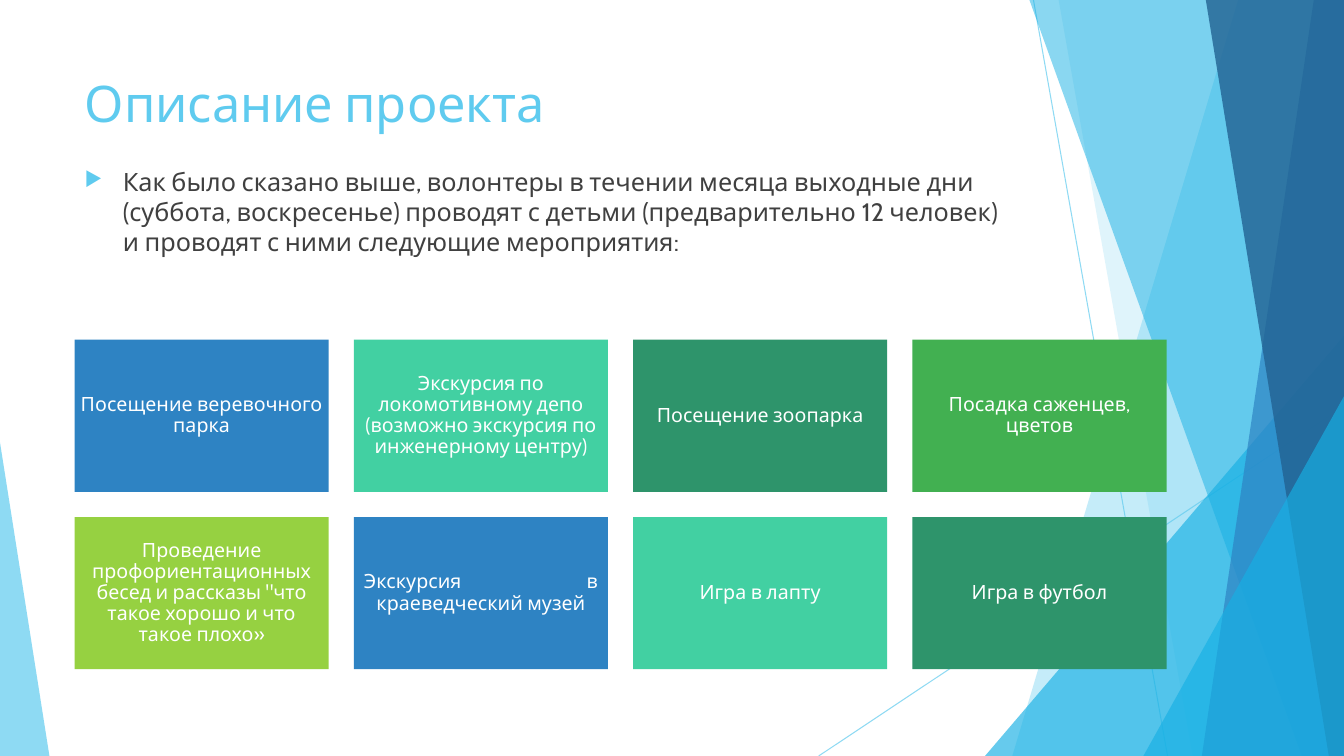
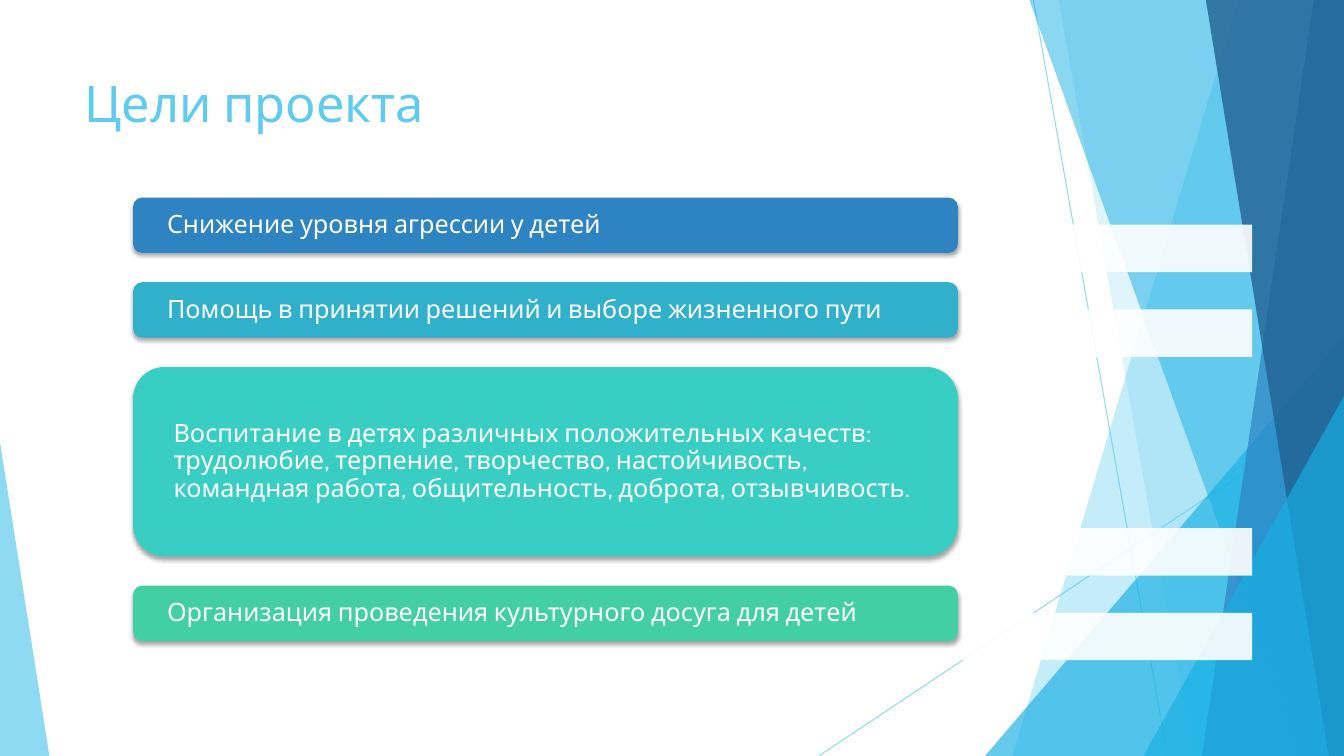
from dataclasses import dataclass

from lxml import etree
from pptx import Presentation
from pptx import util as u
from pptx.dml import color
from pptx.enum import shapes, text
from pptx.oxml import ns

WIDTH, HEIGHT = 13.33, 7.5
FONT = "Cabin"
LEFT = 0.74
TEXT_WIDTH = 9.4
SKY, AZURE, BLUE, NAVY = "5FCBEF", "17B0E4", "2E83C3", "226292"
MINT, PINE, GREEN, LIME = "42D0A2", "2E946B", "42B051", "96D141"
LAGOON, TURQUOISE = "31B0CB", "39CEC4"
WHITE, GRAY, BLACK = "FFFFFF", "404040", "000000"


@dataclass(frozen=True)
class Box:
    left: float
    top: float
    width: float
    height: float

    def emu(self) -> list[u.Length]:
        return [u.Inches(n) for n in (self.left, self.top, self.width, self.height)]


@dataclass(frozen=True)
class Ray:
    start: tuple[float, float]
    end: tuple[float, float]


@dataclass(frozen=True)
class Band:
    """Full-height area from a slanted left edge to the right side of the slide."""
    top_x: float
    bottom_x: float
    fill: str
    opacity: int


@dataclass(frozen=True)
class Wedge:
    """Triangle standing on the bottom of the slide; apex is a share of its width."""
    left: float
    top: float
    width: float
    apex: float
    fill: str
    opacity: int


@dataclass(frozen=True)
class Tile:
    caption: str
    fill: str


@dataclass(frozen=True)
class Goal:
    caption: str
    fill: str
    height: float = 0.55


RAYS = [Ray((10.25, 0), (11.58, HEIGHT)), Ray((WIDTH, 4.03), (8.12, HEIGHT))]
FACETS = [
    Band(12.28, 10.04, SKY, 36),
    Band(10.5, 11.83, SKY, 20),
    Wedge(9.77, 3.33, 3.56, 1, AZURE, 66),
    Band(10.21, 12.91, AZURE, 50),
    Band(13.03, 11.92, BLUE, 70),
    Band(11.96, 13.18, NAVY, 80),
    Wedge(11.34, 3.93, 1.99, 1, AZURE, 66),
    Wedge(0, 4.39, 0.49, 0, SKY, 70),
]

INTRO = ("Как было сказано выше, волонтеры в течении месяца выходные дни (суббота, "
         "воскресенье) проводят с детьми (предварительно 12 человек) и проводят с ними "
         "следующие мероприятия:")
TILE_COLUMNS = 4
TILE = Box(LEFT, 3.37, 2.52, 1.51)
TILE_GAP = 0.25
TILE_INSET = 0.06
TILES = [
    Tile("Посещение веревочного парка", BLUE),
    Tile("Экскурсия по локомотивному депо (возможно экскурсия по инженерному центру)", MINT),
    Tile("Посещение зоопарка", PINE),
    Tile("Посадка саженцев, цветов", GREEN),
    Tile("Проведение профориентационных бесед и рассказы \"что такое хорошо и что "
         "такое плохо»", LIME),
    Tile("Экскурсия\tв\nкраеведческий музей", BLUE),
    Tile("Игра в лапту", MINT),
    Tile("Игра в футбол", PINE),
]

GOAL_LEFT, GOAL_TOP, GOAL_WIDTH = 1.32, 1.96, 8.18
GOAL_GAP = 0.29
GOAL_INSET = 0.31
STRIP_WIDTH, STRIP_HEIGHT = 11.68, 0.47
STRIP_OVERLAP = 0.28
GOALS = [
    Goal("Снижение уровня агрессии у детей", BLUE),
    Goal("Помощь в принятии решений и выборе жизненного пути", LAGOON),
    Goal("Воспитание в детях различных положительных качеств: трудолюбие, терпение, "
         "творчество, настойчивость, командная работа, общительность, доброта, "
         "отзывчивость.", TURQUOISE, 1.88),
    Goal("Организация проведения культурного досуга для детей", MINT),
]


def rgb(value: str) -> color.RGBColor:
    return color.RGBColor.from_string(value)


def add_xml(parent, tag: str, **attributes: str):
    return etree.SubElement(parent, ns.qn(tag), attributes)


def set_opacity(element, percent: int) -> None:
    """Make every plain colour inside the element partly transparent."""
    for node in list(element.iter(ns.qn("a:srgbClr"))):
        add_xml(node, "a:alpha", val=str(percent * 1000))


def paint(shape, fill: str, opacity: int = 100) -> None:
    shape.shadow.inherit = False
    shape.fill.solid()
    shape.fill.fore_color.rgb = rgb(fill)
    shape.line.fill.background()
    if opacity < 100:
        set_opacity(shape.element.spPr, opacity)


def add_panel(target, kind, box: Box, fill: str, opacity: int = 100):
    shape = target.add_shape(kind, *box.emu())
    paint(shape, fill, opacity)
    return shape


def write(shape, content: str, size: int, ink: str, inset: tuple[float, float],
          align=text.PP_ALIGN.LEFT, anchor=text.MSO_ANCHOR.MIDDLE, spacing: float = 0.9):
    """Fill a shape with text; inset is horizontal, then vertical."""
    frame = shape.text_frame
    frame.text = content
    frame.word_wrap = True
    frame.vertical_anchor = anchor
    frame.margin_left = frame.margin_right = u.Inches(inset[0])
    frame.margin_top = frame.margin_bottom = u.Inches(inset[1])
    for paragraph in frame.paragraphs:
        paragraph.alignment = align
        paragraph.line_spacing = spacing
        for run in paragraph.runs:
            run.font.name = FONT
            run.font.size = u.Pt(size)
            run.font.color.rgb = rgb(ink)
    return frame


def add_soft_shadow(shape) -> None:
    effects = shape.element.spPr.find(ns.qn("a:effectLst"))
    shadow = add_xml(effects, "a:outerShdw", blurRad=str(u.Pt(3)), dist=str(u.Pt(2)),
                     dir="5400000", algn="ctr", rotWithShape="0")
    add_xml(shadow, "a:srgbClr", val=BLACK)
    set_opacity(shadow, 35)


def add_ray(target, ray: Ray) -> None:
    points = [u.Inches(n) for n in (*ray.start, *ray.end)]
    line = target.add_connector(shapes.MSO_CONNECTOR.STRAIGHT, *points)
    line.line.color.rgb = rgb(SKY)
    line.line.width = u.Pt(0.75)
    set_opacity(line.element.spPr, 70)
    add_xml(line.element.spPr, "a:effectLst")


def add_band(target, band: Band) -> None:
    builder = target.build_freeform(u.Inches(band.top_x), 0)
    corners = [(WIDTH, 0), (WIDTH, HEIGHT), (band.bottom_x, HEIGHT)]
    builder.add_line_segments([(u.Inches(x), u.Inches(y)) for x, y in corners])
    paint(builder.convert_to_shape(), band.fill, band.opacity)


def add_wedge(target, wedge: Wedge) -> None:
    box = Box(wedge.left, wedge.top, wedge.width, HEIGHT - wedge.top)
    shape = add_panel(target, shapes.MSO_SHAPE.ISOSCELES_TRIANGLE, box,
                      wedge.fill, wedge.opacity)
    shape.adjustments[0] = wedge.apex


def decorate_layout(layout, slide) -> None:
    """Draw the facets as a group on a slide and move it to the shared layout."""
    group = slide.shapes.add_group_shape()
    for ray in RAYS:
        add_ray(group.shapes, ray)
    for facet in FACETS:
        if isinstance(facet, Band):
            add_band(group.shapes, facet)
        else:
            add_wedge(group.shapes, facet)
    for number, node in enumerate(group.element.iter(ns.qn("p:cNvPr")), 100):
        node.set("id", str(number))
    layout.shapes.element.append(group.element)


def add_titled_slide(presentation, layout, heading: str):
    slide = presentation.slides.add_slide(layout)
    title = slide.shapes.title
    title.left, title.top, title.width, title.height = Box(LEFT, 0.67, TEXT_WIDTH, 1.44).emu()
    write(title, heading, 36, SKY, (0.1, 0.05), anchor=text.MSO_ANCHOR.TOP, spacing=1)
    return slide


def add_intro(slide) -> None:
    box = slide.shapes.add_textbox(*Box(LEFT, 1.6, TEXT_WIDTH, 1.11).emu())
    frame = write(box, INTRO, 18, GRAY, (0.1, 0.05), anchor=text.MSO_ANCHOR.TOP, spacing=1)
    properties = frame.paragraphs[0]._p.get_or_add_pPr()
    indent = u.Inches(0.38)
    properties.set("marL", str(indent))
    properties.set("indent", str(-indent))
    add_xml(add_xml(properties, "a:buClr"), "a:srgbClr", val=SKY)
    add_xml(properties, "a:buSzPct", val="80000")
    add_xml(properties, "a:buChar", char="▶")


def spread_first_line(frame) -> None:
    """Push the words of the first line apart to both sides of the tile."""
    paragraph = frame.paragraphs[0]
    paragraph.alignment = text.PP_ALIGN.LEFT
    properties = paragraph._p.get_or_add_pPr()
    properties.set("marL", str(u.Inches(0.04)))
    stops = add_xml(properties, "a:tabLst")
    add_xml(stops, "a:tab", pos=str(u.Inches(2.32)), algn="r")


def add_tiles(slide) -> None:
    for index, tile in enumerate(TILES):
        row, column = divmod(index, TILE_COLUMNS)
        box = Box(TILE.left + column * (TILE.width + TILE_GAP),
                  TILE.top + row * (TILE.height + TILE_GAP), TILE.width, TILE.height)
        shape = add_panel(slide.shapes, shapes.MSO_SHAPE.RECTANGLE, box, tile.fill)
        frame = write(shape, tile.caption, 14, WHITE, (TILE_INSET, TILE_INSET),
                      align=text.PP_ALIGN.CENTER)
        if "\t" in tile.caption:
            spread_first_line(frame)


def add_goals(slide) -> None:
    top = GOAL_TOP
    for goal in GOALS:
        bottom = top + goal.height
        strip = Box(LEFT, bottom - STRIP_OVERLAP, STRIP_WIDTH, STRIP_HEIGHT)
        add_panel(slide.shapes, shapes.MSO_SHAPE.RECTANGLE, strip, WHITE, 90)
        bar = add_panel(slide.shapes, shapes.MSO_SHAPE.ROUNDED_RECTANGLE,
                        Box(GOAL_LEFT, top, GOAL_WIDTH, goal.height), goal.fill)
        add_soft_shadow(bar)
        write(bar, goal.caption, 18, WHITE, (GOAL_INSET, 0))
        top = bottom + GOAL_GAP


def main() -> None:
    presentation = Presentation()
    presentation.slide_width = u.Inches(WIDTH)
    presentation.slide_height = u.Inches(HEIGHT)
    layout = presentation.slide_layouts.get_by_name("Title Only")

    description = add_titled_slide(presentation, layout, "Описание проекта")
    decorate_layout(layout, description)
    add_intro(description)
    add_tiles(description)

    goals = add_titled_slide(presentation, layout, "Цели проекта")
    add_goals(goals)
    presentation.save("out.pptx")


if __name__ == "__main__":
    main()
